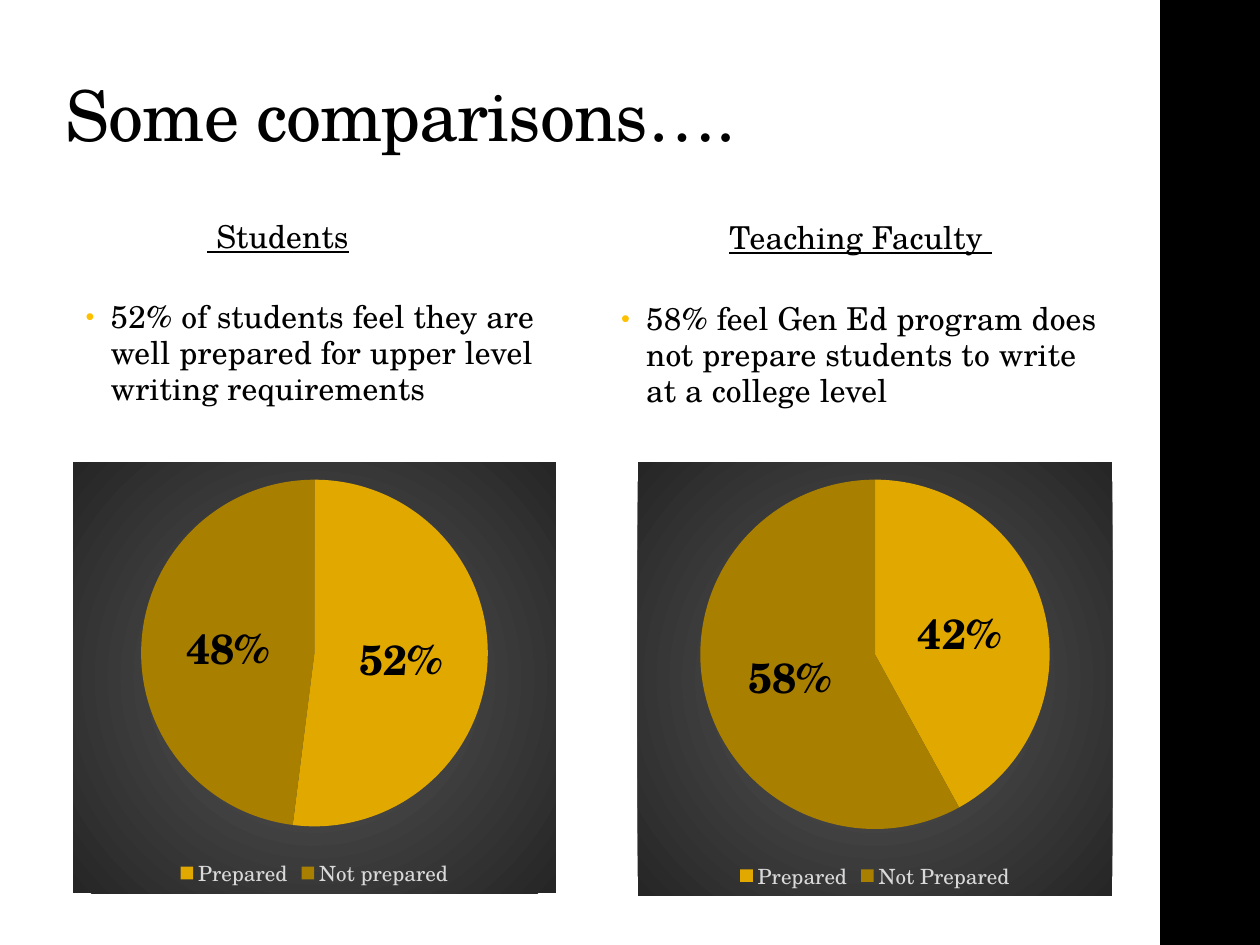
from lxml import etree
from pptx import Presentation
from pptx import util as u
from pptx.chart import data as cd
from pptx.dml.color import RGBColor
from pptx.enum import chart as ch, shapes, text
from pptx.oxml import ns

Pt = u.Pt
FACE = "TeX Gyre Schola"
BLACK = RGBColor(0, 0, 0)
PALE = RGBColor(0xD9, 0xD9, 0xD9)
GOLD = RGBColor(0xE1, 0xA9, 0x00)
DARK = RGBColor(0xA9, 0x7F, 0x00)
DOT = RGBColor(0xFF, 0xC0, 0x00)
MID = RGBColor(0x59, 0x59, 0x59)
EDGE = RGBColor(0x26, 0x26, 0x26)
NS = ns.nsdecls("a", "c")
BACK = f"""<c:spPr {NS}><a:gradFill><a:gsLst>
<a:gs pos="0"><a:srgbClr val="{MID}"/></a:gs>
<a:gs pos="100000"><a:srgbClr val="{EDGE}"/></a:gs></a:gsLst>
<a:path path="circle"><a:fillToRect l="50000" t="50000" r="50000" b="50000"/></a:path>
</a:gradFill><a:ln><a:noFill/></a:ln></c:spPr>"""
BULLET = (
    f'<a:buClr {NS}><a:srgbClr val="{DOT}"/></a:buClr>',
    f'<a:buSzPct {NS} val="80000"/>',
    f'<a:buFont {NS} typeface="Arial"/>',
    f'<a:buChar {NS} char="•"/>',
)


def style(font, size, color=BLACK, **more):
    form = {"name": FACE, "size": Pt(size), **more}
    for key, val in form.items():
        setattr(font, key, val)
    font.color.rgb = color


def write(box, words, size, gap, frame, para, **more):
    tf = box.text_frame
    form = {"word_wrap": True, "auto_size": text.MSO_AUTO_SIZE.NONE, **frame}
    for key, val in form.items():
        setattr(tf, key, val)
    p = tf.paragraphs[0]
    for key, val in para.items():
        setattr(p, key, val)
    run = p.add_run()
    run.text = words
    style(run.font, size, **more)
    run.font._element.set("spc", str(gap))
    return p


prs = Presentation()
prs.slide_width, prs.slide_height = Pt(720), Pt(540)
slide = prs.slides.add_slide(prs.slide_layouts[5])

bar = slide.shapes.add_shape(shapes.MSO_SHAPE.RECTANGLE, Pt(663), 0, Pt(57.5), Pt(540))
bar.shadow.inherit = False
bar.fill.solid()
bar.fill.fore_color.rgb = BLACK
bar.line.fill.background()

low = {"vertical_anchor": text.MSO_ANCHOR.BOTTOM}
title = slide.shapes.title
spot = {"left": 30.25, "top": -11.5, "width": 572.5, "height": 104.5}
for key, val in spot.items():
    setattr(title, key, Pt(val))
write(title, "Some comparisons….", 40, -50, low,
      {"alignment": text.PP_ALIGN.LEFT, "line_spacing": 0.9})

sides = [
    {"head": " Students", "spot": (58.3, 92.2, 264.2, 57.6), "pad": 70,
     "note": "52% of students feel they are well prepared for upper level writing requirements",
     "body": (41.8, 167.8, 297.4, 318.2),
     "pie": (41.8, 264.2, 275.8, 246.2),
     "cats": ["Prepared", "Not prepared"], "vals": [52, 48]},
    {"head": "Teaching Faculty ", "spot": (359.3, 92.9, 265, 57.6), "pad": 7.2,
     "note": "58% feel Gen Ed program does not prepare students to write at a college level",
     "body": (347.8, 169.2, 288, 316.8),
     "pie": (364.3, 264.2, 271.4, 247.7),
     "cats": ["Prepared", "Not Prepared"], "vals": [42, 58]},
]
lead = {"line_spacing": 0.95, "space_after": Pt(2)}

for side in sides:
    head = slide.shapes.add_textbox(*map(Pt, side["spot"]))
    write(head, side["head"], 18, 10, {**low, "margin_right": Pt(side["pad"])},
          {**lead, "alignment": text.PP_ALIGN.CENTER}, underline=True)

    body = slide.shapes.add_textbox(*map(Pt, side["body"]))
    p = write(body, side["note"], 18, 10, {}, lead)
    props = p._p.get_or_add_pPr()
    props.set("marL", str(int(Pt(14.4))))
    props.set("indent", str(-int(Pt(14.4))))
    for xml in BULLET:
        props.append(etree.fromstring(xml))

    data = cd.CategoryChartData()
    data.categories = side["cats"]
    data.add_series("Series 1", side["vals"])
    pie = slide.shapes.add_chart(ch.XL_CHART_TYPE.PIE, *map(Pt, side["pie"]), data).chart
    style(pie.font, 10)
    pie._chartSpace.find(ns.qn("c:txPr")).addprevious(etree.fromstring(BACK))
    pie.has_title = False
    pie.has_legend = True
    pie.legend.position = ch.XL_LEGEND_POSITION.BOTTOM
    pie.legend.include_in_layout = False
    style(pie.legend.font, 12, PALE)

    plot = pie.plots[0]
    plot.vary_by_categories = True
    for i, color in enumerate((GOLD, DARK)):
        fill = plot.series[0].points[i].format.fill
        fill.solid()
        fill.fore_color.rgb = color
    tags = plot.series[0].data_labels
    form = {"show_percentage": True, "show_value": False, "number_format": "0%",
            "number_format_is_linked": False, "position": ch.XL_LABEL_POSITION.CENTER}
    for key, val in form.items():
        setattr(tags, key, val)
    style(tags.font, 24, bold=True)

prs.save("out.pptx")
